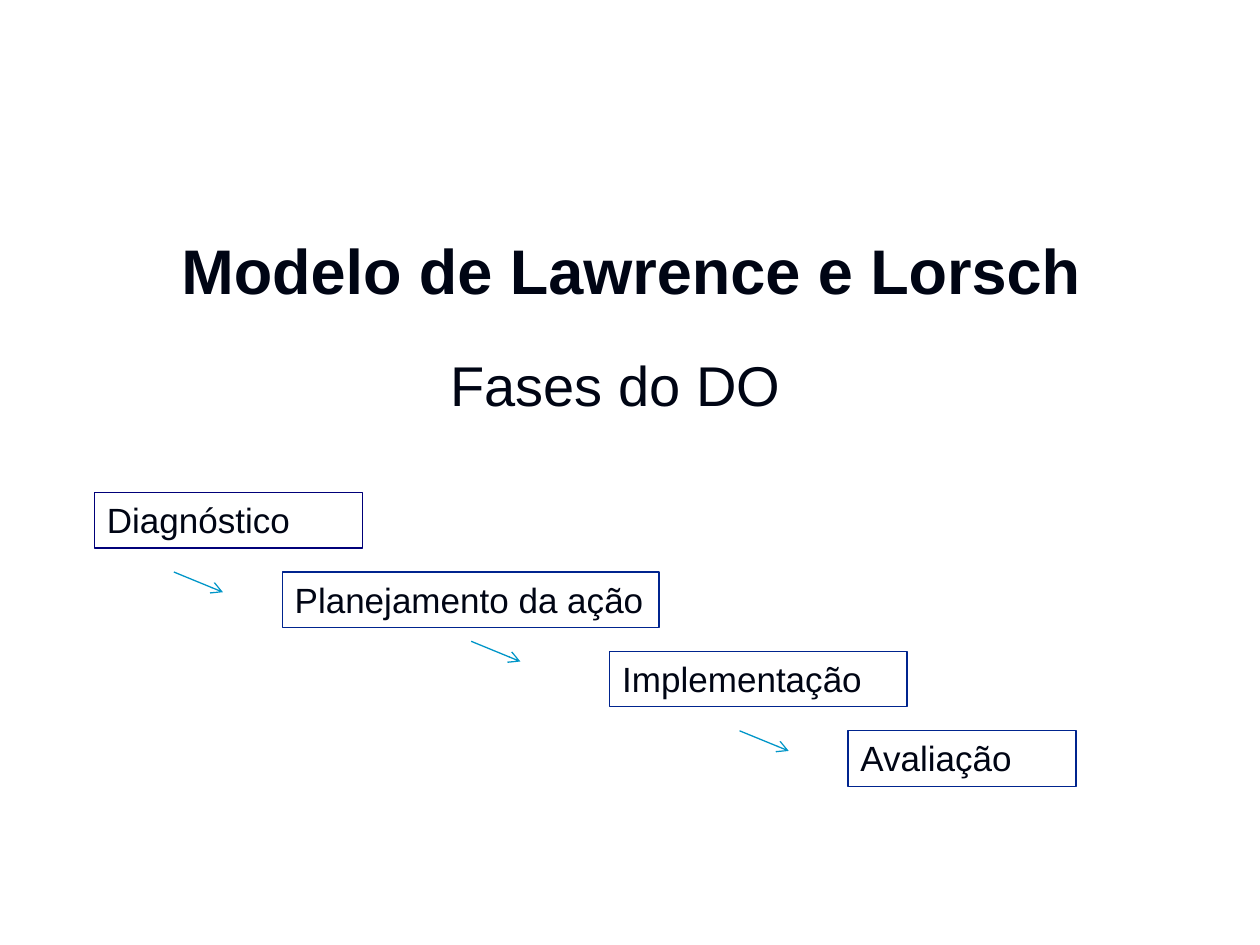
"""Build the slide on the phases of DO in the Lawrence and Lorsch model."""
from lxml.etree import SubElement
from pptx import Presentation
from pptx.dml.color import RGBColor as Rgb
from pptx.enum.shapes import MSO_CONNECTOR as Link, MSO_SHAPE as Kind
from pptx.enum.text import MSO_ANCHOR as Anchor, PP_ALIGN as Align
from pptx.oxml.ns import qn
from pptx.util import Inches, Pt

TITLE = "Modelo de Lawrence e Lorsch"
SUB = "Fases do DO"
STEPS = [
    ("Diagnóstico", 0.75, 2.13, "navy"),
    ("Planejamento da ação", 2.24, 2.99, "blue"),
    ("Implementação", 4.84, 2.36, "blue"),
    ("Avaliação", 6.73, 1.81, "blue"),
]
ARROWS = [(1.38, 4.54), (3.74, 5.09), (5.87, 5.8)]
COLORS = {"text": "000514", "navy": "000079", "blue": "00248E", "cyan": "0096C8"}
FONT = "Arial"
TOP, PITCH, HIGH = 3.91, 0.63, 0.44
RUN, DROP = 0.39, 0.16


def color(name):
    return Rgb.from_string(COLORS[name])


def write(shape, text, size=20, bold=False, align=Align.LEFT, anchor=Anchor.TOP):
    frame = shape.text_frame
    frame.word_wrap = True
    frame.vertical_anchor = anchor
    frame.text = text
    par = frame.paragraphs[0]
    par.alignment = align
    font = par.runs[0].font
    font.name, font.size, font.bold = FONT, Pt(size), bold
    font.color.rgb = color("text")


def add_step(slide, row, text, left, width, tone):
    box = slide.shapes.add_shape(
        Kind.RECTANGLE, *map(Inches, (left, TOP + row * PITCH, width, HIGH)))
    box.shadow.inherit = False
    box.fill.background()
    box.line.color.rgb = color(tone)
    box.line.width = Pt(0.75)
    write(box, text)


def add_arrow(slide, left, top):
    ends = map(Inches, (left, top, left + RUN, top + DROP))
    arrow = slide.shapes.add_connector(Link.STRAIGHT, *ends)
    arrow.line.color.rgb = color("cyan")
    arrow.line.width = Pt(0.75)
    SubElement(arrow.line._get_or_add_ln(), qn("a:tailEnd"), type="arrow")
    SubElement(arrow._element.spPr, qn("a:effectLst"))


def main():
    deck = Presentation()
    deck.slide_width, deck.slide_height = Inches(10), Inches(7.5)
    slide = deck.slides.add_slide(deck.slide_layouts[5])
    title = slide.shapes.title
    title.left, title.top, title.width, title.height = map(Inches, (0.51, 1.7, 9, 0.87))
    write(title, TITLE, size=36, bold=True, align=Align.CENTER, anchor=Anchor.MIDDLE)
    sub = slide.shapes.add_textbox(*map(Inches, (2.17, 2.73, 5.43, 0.64)))
    write(sub, SUB, size=32, align=Align.CENTER)
    for row, step in enumerate(STEPS):
        add_step(slide, row, *step)
    for spot in ARROWS:
        add_arrow(slide, *spot)
    deck.save("out.pptx")


if __name__ == "__main__":
    main()
